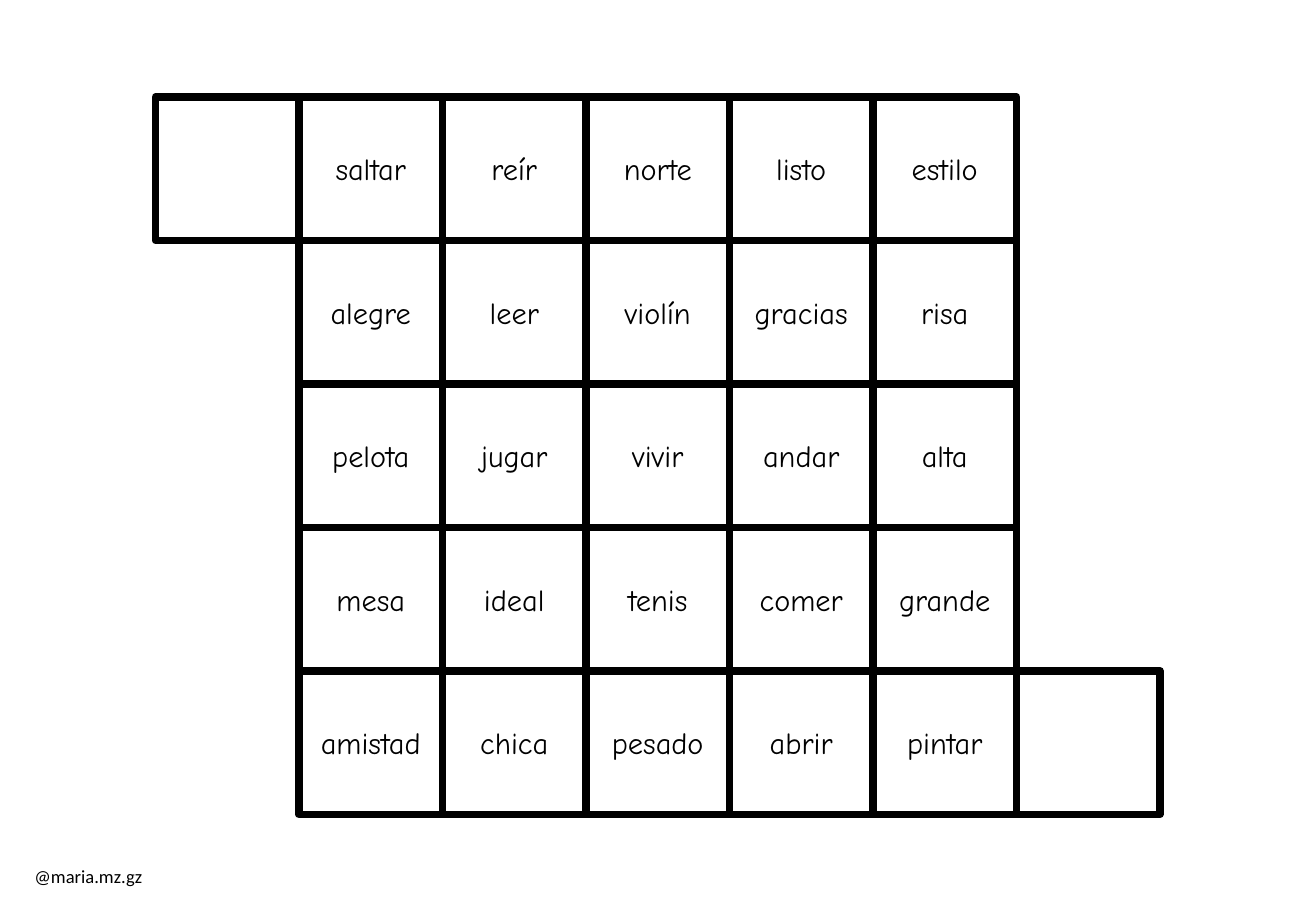
from pptx import Presentation
from pptx.dml.color import RGBColor
from pptx.enum.shapes import MSO_SHAPE as Shape
from pptx.enum.text import MSO_ANCHOR as Anchor, PP_ALIGN as Align
from pptx.util import Pt

BLACK = RGBColor(0, 0, 0)
WHITE = RGBColor(255, 255, 255)

BOARD_LEFT, BOARD_TOP = 92.2, 57.5
CELL_SIZE = 85.05
BORDER_WIDTH = 4.5

WORD_FONT = {"name": "Comic Neue", "size": Pt(18)}
AUTHOR_FONT = {"name": "Calibri", "size": Pt(11)}

# Each row: the column of its first square, then the words; "" is an empty square.
BOARD = [
    (0, ["", "saltar", "reír", "norte", "listo", "estilo"]),
    (1, ["alegre", "leer", "violín", "gracias", "risa"]),
    (1, ["pelota", "jugar", "vivir", "andar", "alta"]),
    (1, ["mesa", "ideal", "tenis", "comer", "grande"]),
    (1, ["amistad", "chica", "pesado", "abrir", "pintar", ""]),
]


def write_centred(box, text, font_format):
    para = box.text_frame.paragraphs[0]
    para.alignment = Align.CENTER
    span = para.add_run()
    span.text = text
    for attribute, value in font_format.items():
        setattr(span.font, attribute, value)
    span.font.color.rgb = BLACK


def add_square(board, column, row, word):
    left = BOARD_LEFT + column * CELL_SIZE
    top = BOARD_TOP + row * CELL_SIZE
    square = board.shapes.add_shape(
        Shape.RECTANGLE, Pt(left), Pt(top), Pt(CELL_SIZE), Pt(CELL_SIZE))
    square.shadow.inherit = False
    square.fill.solid()
    square.fill.fore_color.rgb = WHITE
    square.line.color.rgb = BLACK
    square.line.width = Pt(BORDER_WIDTH)
    if word:
        square.text_frame.vertical_anchor = Anchor.MIDDLE
        write_centred(square, word, WORD_FONT)


def add_board(page):
    board = page.shapes.add_group_shape()
    for row, (first_column, words) in enumerate(BOARD):
        for column, word in enumerate(words, first_column):
            add_square(board, column, row, word)


def add_author(page):
    box = page.shapes.add_textbox(Pt(12.4), Pt(509), Pt(80), Pt(20.6))
    write_centred(box, "@maria.mz.gz", AUTHOR_FONT)


def main():
    deck = Presentation()
    deck.slide_width, deck.slide_height = Pt(780), Pt(540)
    page = deck.slides.add_slide(deck.slide_layouts.get_by_name("Blank"))
    add_board(page)
    add_author(page)
    deck.save("out.pptx")


if __name__ == "__main__":
    main()
